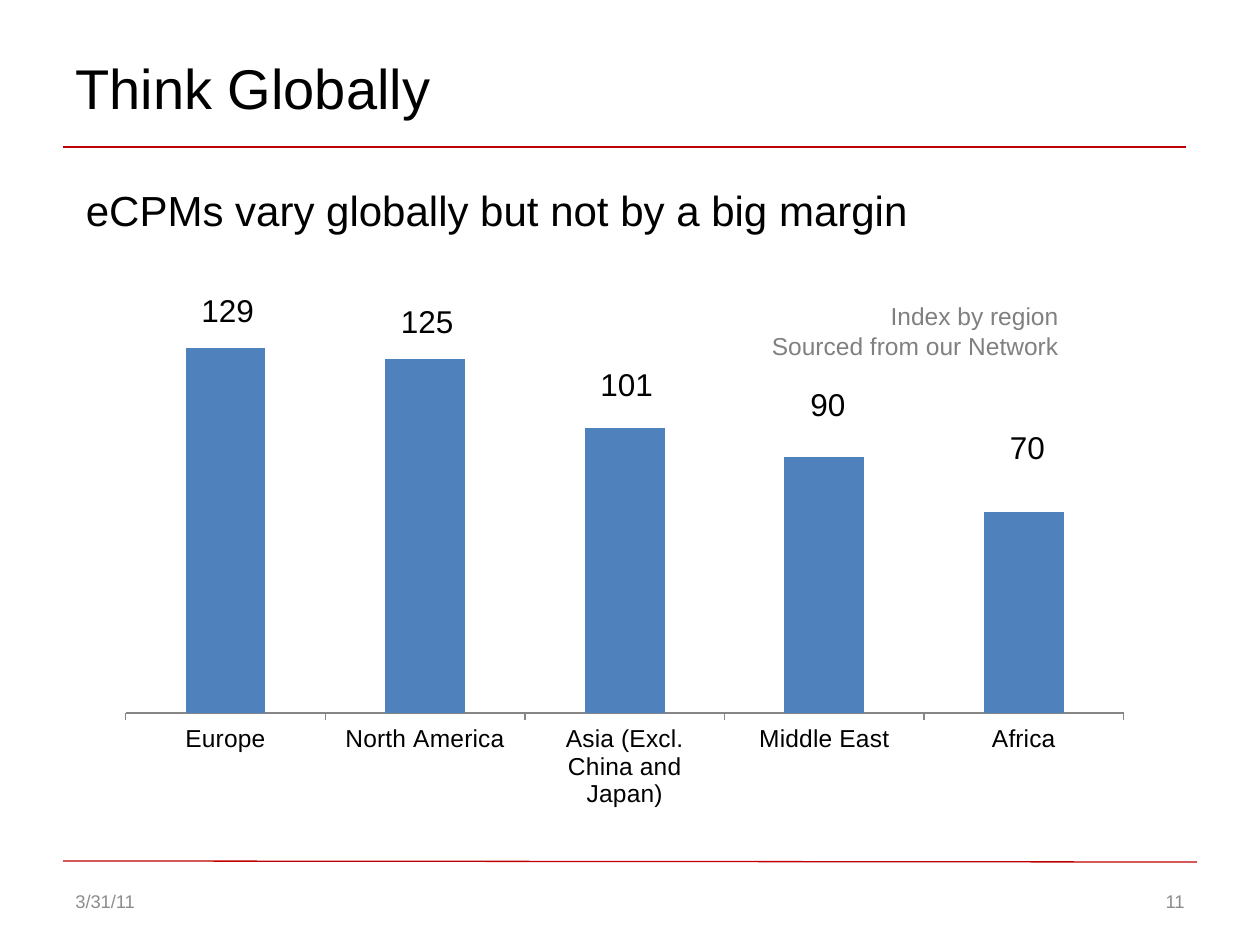
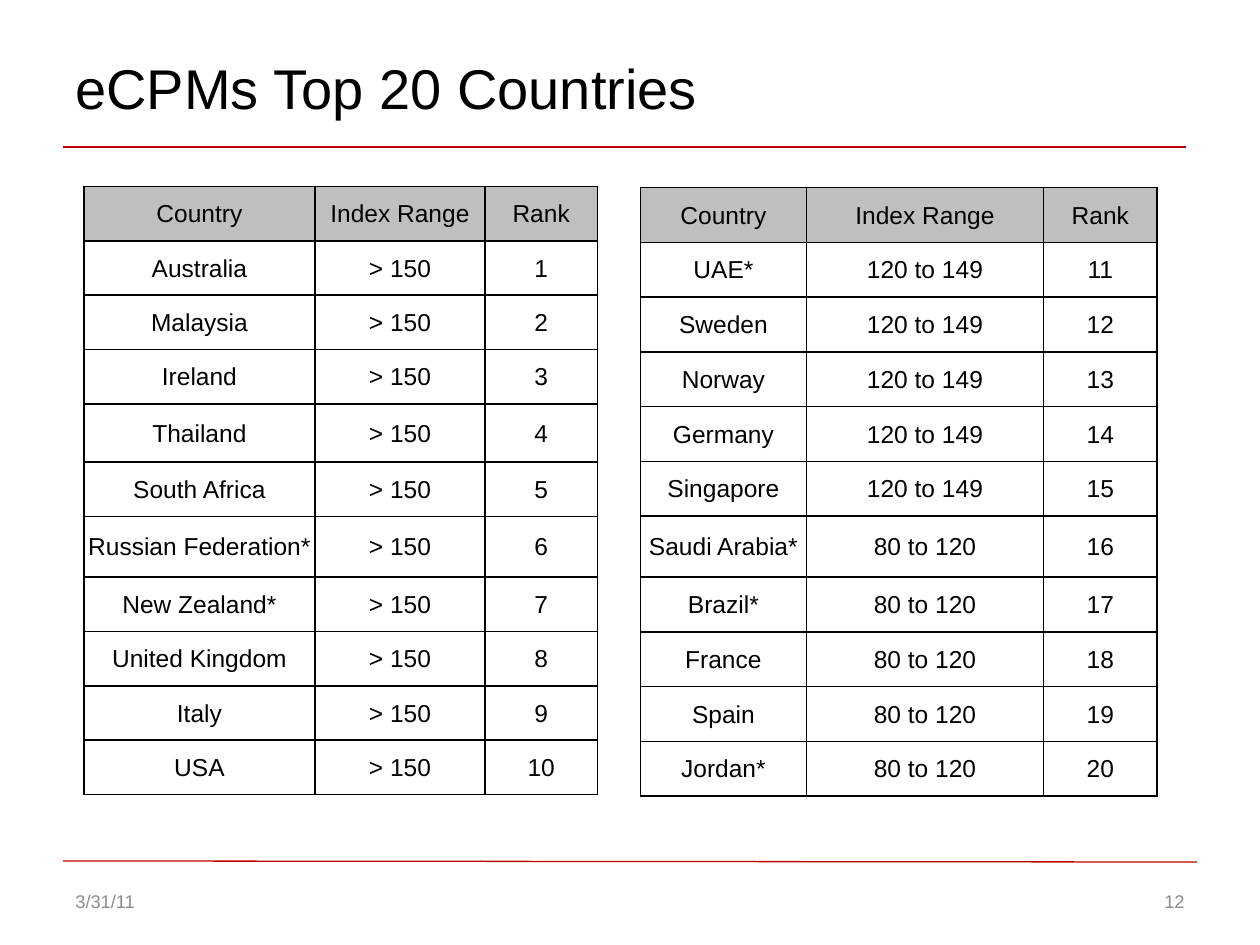
from dataclasses import dataclass

from lxml.etree import SubElement
from pptx import Presentation
from pptx.chart.data import CategoryChartData
from pptx.dml.color import RGBColor
from pptx.enum.chart import XL_CHART_TYPE, XL_TICK_LABEL_POSITION, XL_TICK_MARK
from pptx.enum.shapes import MSO_CONNECTOR
from pptx.enum.text import MSO_ANCHOR, PP_ALIGN
from pptx.oxml import parse_xml
from pptx.oxml.ns import nsdecls, qn
from pptx.util import Inches, Pt


@dataclass(frozen=True)
class Theme:
    face: str = "Arial"
    ink: str = "000000"
    rule: str = "C00000"
    bar: str = "4F81BD"
    axis: str = "868686"
    band: str = "BFBFBF"
    note: str = "808080"
    foot: str = "8C8C8C"
    title: float = 32
    lead: float = 24
    value: float = 18
    small: float = 14
    tiny: float = 10.5
    thin: float = 0.75


@dataclass(frozen=True)
class Box:
    left: float
    top: float
    wide: float
    high: float

    def sub(self, left, top, wide, high):
        return Box(self.left + left, self.top + top, wide, high)

    def frame(self):
        return [cell(n) for n in (self.left, self.top, self.wide, self.high)]


THEME = Theme()
COLS, ROWS = 120, 90
PAGE = Box(0, 0, COLS, ROWS)
HEAD = Box(6, 3.6, 107, 10.4)
FOOT = Box(6, 82, 108, 6.2)
DATE = "3/31/11"

REGIONS = {
    "Europe": (100, "129", 27.1),
    "North America": (97, "125", 28.2),
    "Asia (Excl. China and Japan)": (78, "101", 34.2),
    "Middle East": (70, "90", 36.1),
    "Africa": (55, "70", 40.2),
}
LABELS = ("Country", "Index Range", "Rank")
FIRST = ("Australia", "Malaysia", "Ireland", "Thailand", "South Africa",
         "Russian Federation*", "New Zealand*", "United Kingdom", "Italy", "USA")
SECOND = ("UAE*", "Sweden", "Norway", "Germany", "Singapore",
          "Saudi Arabia*", "Brazil*", "France", "Spain", "Jordan*")


def cell(count):
    return Inches(count * 10 / COLS)


def apply(thing, values):
    for name, value in values.items():
        setattr(thing, name, value)


def style(font, size, tint=THEME.ink):
    apply(font, {"name": THEME.face, "size": Pt(size)})
    font.color.rgb = RGBColor.from_string(tint)


def write(slide, box, lines, size, tint=THEME.ink, align=PP_ALIGN.LEFT, anchor=MSO_ANCHOR.TOP):
    frame = slide.shapes.add_textbox(*box.frame()).text_frame
    apply(frame, {"word_wrap": True, "vertical_anchor": anchor, "text": "\n".join(lines)})
    for line in frame.paragraphs:
        line.alignment = align
        style(line.font, size, tint)


def rule(slide, box):
    left, top, wide, high = box.frame()
    line = slide.shapes.add_connector(MSO_CONNECTOR.STRAIGHT, left, top, left + wide, top + high)
    line.line.color.rgb = RGBColor.from_string(THEME.rule)
    line.line.width = Pt(THEME.thin)
    SubElement(line._element.spPr, qn("a:effectLst"))


def head(slide, box, title):
    rule(slide, box.sub(0, box.high, box.wide, 0))
    write(slide, box.sub(0, 0, 82, 9.4), [title], THEME.title, anchor=MSO_ANCHOR.MIDDLE)


def foot(slide, box, number):
    rule(slide, box.sub(0, 0, box.wide, 0.1))
    wide = 28
    marks = ((0, DATE, PP_ALIGN.LEFT), (box.wide - wide, str(number), PP_ALIGN.RIGHT))
    for left, words, align in marks:
        write(slide, box.sub(left, 1.4, wide, 4.8), [words], THEME.tiny, THEME.foot,
              align, MSO_ANCHOR.MIDDLE)


def start(deck, title, number):
    slide = deck.slides.add_slide(deck.slide_layouts[6])
    head(slide, HEAD, title)
    foot(slide, FOOT, number)
    return slide


def place(chart):
    area = chart._chartSpace.chart.plotArea
    for old in area.findall(qn("c:layout")):
        area.remove(old)
    shares = {"x": 0.02, "y": 0.08, "w": 0.96, "h": 0.71}
    parts = "".join(f'<c:{name} val="{share}"/>' for name, share in shares.items())
    area.insert(0, parse_xml(
        f'<c:layout {nsdecls("c")}><c:manualLayout><c:layoutTarget val="inner"/>'
        f'<c:xMode val="edge"/><c:yMode val="edge"/>{parts}</c:manualLayout></c:layout>'))


def bars(slide, box):
    data = CategoryChartData()
    data.categories = list(REGIONS)
    data.add_series("Series 1", [size for size, _, _ in REGIONS.values()])
    chart = slide.shapes.add_chart(XL_CHART_TYPE.COLUMN_STACKED, *box.frame(), data).chart
    apply(chart, {"has_legend": False, "has_title": False})
    style(chart.font, THEME.value)
    plot = chart.plots[0]
    apply(plot, {"gap_width": 150, "overlap": 100, "vary_by_categories": False})
    fill = plot.series[0].format.fill
    fill.solid()
    fill.fore_color.rgb = RGBColor.from_string(THEME.bar)
    apply(chart.value_axis, {"visible": False, "has_major_gridlines": False,
                             "minimum_scale": 0, "maximum_scale": 100})
    axis = chart.category_axis
    apply(axis, {"major_tick_mark": XL_TICK_MARK.OUTSIDE,
                 "tick_label_position": XL_TICK_LABEL_POSITION.LOW})
    axis.format.line.color.rgb = RGBColor.from_string(THEME.axis)
    axis.format.line.width = Pt(THEME.thin)
    style(axis.tick_labels.font, THEME.small)
    place(chart)


def values(slide, box):
    step = 19
    for spot, (_, words, top) in enumerate(REGIONS.values()):
        shift, wide = (0, 12) if len(words) == 3 else (1, 9.1)
        write(slide, box.sub(18 + step * spot + shift, top, wide, 4.8), [words], THEME.value)


def globe(deck, number):
    slide = start(deck, "Think Globally", number)
    write(slide, PAGE.sub(7, 17, 101, 17),
          ["eCPMs vary globally but not by a big margin"], THEME.lead)
    bars(slide, PAGE.sub(10, 29.2, 99, 49))
    values(slide, PAGE)
    write(slide, PAGE.sub(67, 28.1, 35, 6.8), ["Index by region", "Sourced from our Network"],
          THEME.small, THEME.note, PP_ALIGN.RIGHT)


def edge(item):
    props = item._tc.get_or_add_tcPr()
    for spot, side in enumerate(("lnL", "lnR", "lnT", "lnB")):
        props.insert(spot, parse_xml(
            f'<a:{side} {nsdecls("a")} w="{Pt(1)}"><a:solidFill>'
            f'<a:srgbClr val="{THEME.ink}"/></a:solidFill></a:{side}>'))


def fill(item, words, top):
    apply(item, {"text": words, "vertical_anchor": MSO_ANCHOR.MIDDLE,
                 "margin_left": Inches(0.01), "margin_right": Inches(0.01),
                 "margin_top": Inches(0.01), "margin_bottom": 0})
    line = item.text_frame.paragraphs[0]
    line.alignment = PP_ALIGN.CENTER
    style(line.font, THEME.small)
    if top:
        item.fill.solid()
        item.fill.fore_color.rgb = RGBColor.from_string(THEME.band)
    else:
        item.fill.background()
    edge(item)


def grid(slide, box, rows, widths, high, tall):
    table = slide.shapes.add_table(len(rows), len(widths), *box.frame()).table
    apply(table, {"first_row": False, "horz_banding": False})
    for col, wide in zip(table.columns, widths):
        col.width = cell(wide)
    for down, words in enumerate(rows):
        table.rows[down].height = cell(tall.get(down, high))
        for across, word in enumerate(words):
            fill(table.cell(down, across), word, down == 0)


def ranks(names, scores, first):
    body = zip(names, scores, map(str, range(first, first + len(names))))
    return [LABELS, *body]


def lands(deck, number):
    slide = start(deck, "eCPMs Top 20 Countries", number)
    grid(slide, PAGE.sub(8, 17.76, 48.9, 58), ranks(FIRST, ["> 150"] * 10, 1),
         (22, 16.2, 10.7), 5.18, {4: 5.54, 6: 5.78})
    grid(slide, PAGE.sub(61, 17.86, 49.2, 58),
         ranks(SECOND, ["120 to 149"] * 5 + ["80 to 120"] * 5, 11),
         (15.8, 22.6, 10.8), 5.22, {6: 5.82})


def main():
    deck = Presentation()
    apply(deck, {"slide_width": cell(COLS), "slide_height": cell(ROWS)})
    globe(deck, 11)
    lands(deck, 12)
    deck.save("out.pptx")


if __name__ == "__main__":
    main()
